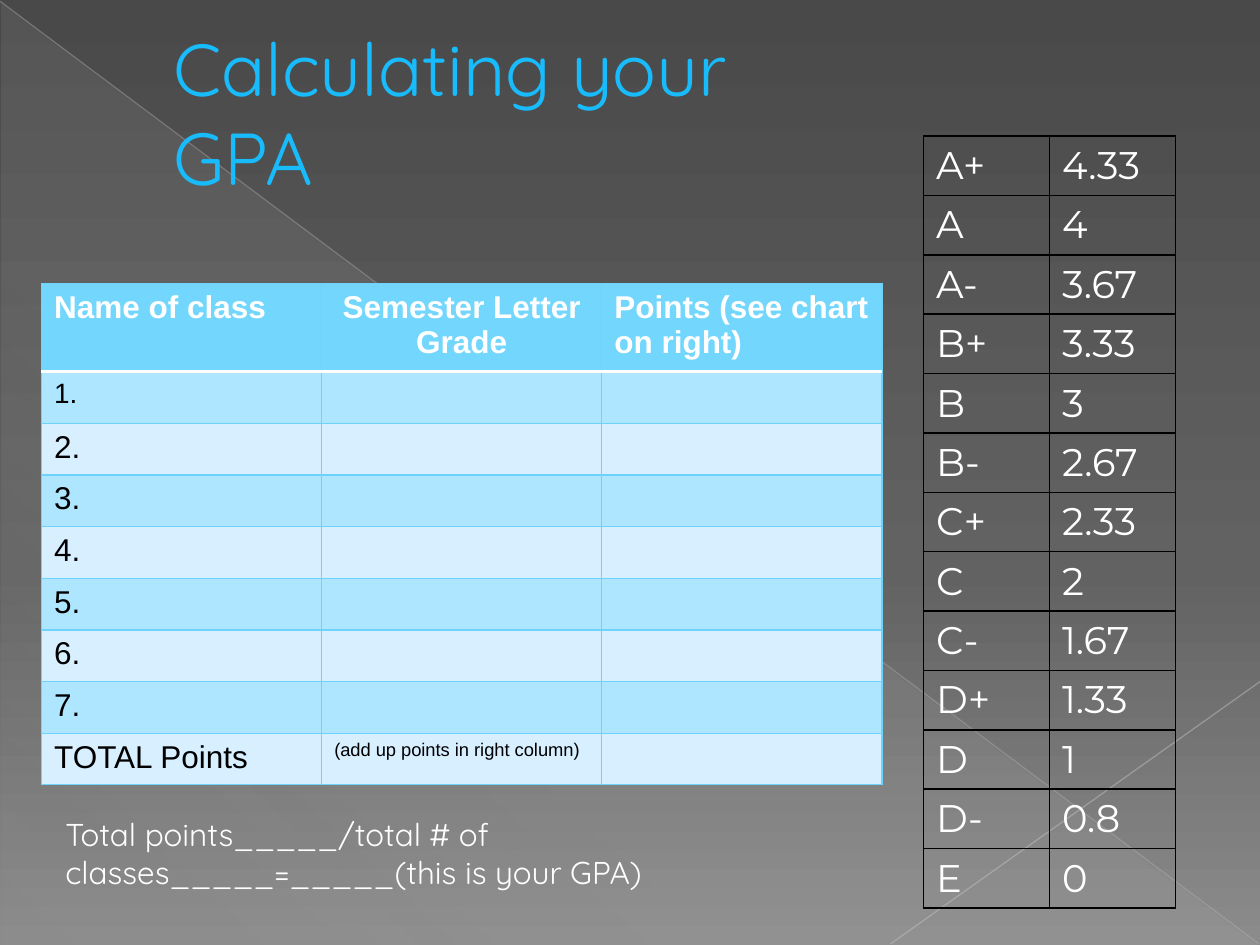
from lxml import etree
from pptx import Presentation
from pptx import util as u
from pptx.dml.color import RGBColor
from pptx.enum import shapes, text
from pptx.oxml import parse_xml
from pptx.oxml.ns import qn

# Content
TITLE = "Calculating your \vGPA"
FORMULA = "Total points_____/total # of classes_____=_____(this is your GPA)"
GRADES = [("A+", "4.33"), ("A", "4"), ("A-", "3.67"), ("B+", "3.33"),
          ("B", "3"), ("B-", "2.67"), ("C+", "2.33"), ("C", "2"),
          ("C-", "1.67"), ("D+", "1.33"), ("D", "1"), ("D-", "0.8"),
          ("E", "0")]
HEADS = ("Name of class", "Semester Letter Grade",
         "Points (see chart on right)")
CLASSES = [HEADS] + [(f"{n}.", "", "") for n in range(1, 8)]
CLASSES += [("TOTAL Points", "(add up points in right column)", "")]

# Look
COLORS = {"title": "18BBFC", "white": "FFFFFF", "black": "000000",
          "head": "73D6FD", "odd": "AFE6FF", "even": "D7EFFF",
          "edge": "6DD3FB", "shade": "D2D2D2", "down": "BEBEBE",
          "up": "C5C5C5"}
BACK = [(0, "494949", 100), (60, "626262", 100), (100, "8B8B8B", 100)]
SHADE = [(0, COLORS["shade"], 10), (70, COLORS["shade"], 8),
         (100, COLORS["shade"], 1)]
RAYS = [((0, 0.01), (9.99, 7.49), "down", 35),
        ((10, 5.41), (7.07, 7.49), "up", 45)]
FONTS = {"title": {"name": "Quicksand", "size": u.Pt(42), "color": "title"},
         "formula": {"name": "Quicksand", "size": u.Pt(18), "color": "white"},
         "grade": {"name": "Montserrat", "size": u.Pt(22), "color": "white"},
         "head": {"name": "Arial", "size": u.Pt(18), "color": "white",
                  "bold": True},
         "body": {"name": "Arial", "size": u.Pt(18), "color": "black",
                  "bold": False}}
FONTS["first"] = {**FONTS["body"], "size": u.Pt(16)}
FONTS["note"] = {**FONTS["body"], "size": u.Pt(10.5)}
NS = "http://schemas.openxmlformats.org/drawingml/2006/main"


def rgb(key):
    return RGBColor.from_string(COLORS[key])


def style(font, look):
    for key, value in look.items():
        if key == "color":
            font.color.rgb = rgb(value)
        else:
            setattr(font, key, value)


def blend(stops, angle):
    """Gradient fill element from (position, colour, opacity) stops."""
    marks = "".join(
        f'<a:gs pos="{pos * 1000}"><a:srgbClr val="{color}">'
        f'<a:alpha val="{alpha * 1000}"/></a:srgbClr></a:gs>'
        for pos, color, alpha in stops)
    return parse_xml(f'<a:gradFill xmlns:a="{NS}" rotWithShape="1"><a:gsLst>'
                     f'{marks}</a:gsLst><a:lin ang="{angle * 60000}" '
                     f'scaled="0"/></a:gradFill>')


def paint(fill, holder, stops, angle):
    fill.solid()
    old = holder.find(qn("a:solidFill"))
    holder.replace(old, blend(stops, angle))


def add_ray(start, end, color, alpha):
    ends = [u.Inches(n) for n in (*start, *end)]
    ray = slide.shapes.add_connector(shapes.MSO_CONNECTOR.STRAIGHT, *ends)
    ray.line.width = u.Pt(0.75)
    ray.line.color.rgb = rgb(color)
    tone = ray.line._ln.find(".//" + qn("a:srgbClr"))
    etree.SubElement(tone, qn("a:alpha"), val=str(alpha * 1000))
    etree.SubElement(ray._element.spPr, qn("a:effectLst"))


def add_text(words, look, box, anchor):
    frame = slide.shapes.add_textbox(*map(u.Inches, box)).text_frame
    frame.word_wrap = True
    frame.vertical_anchor = anchor
    para = frame.paragraphs[0]
    para.text = words
    for run in para.runs:
        style(run.font, FONTS[look])
    return para


def edge(cell, sides):
    """Draw borders; sides maps L, R, T, B to (colour, points)."""
    props = cell._tc.get_or_add_tcPr()
    for spot, side in enumerate("LRTB"):
        color, width = sides[side]
        props.insert(spot, parse_xml(
            f'<a:ln{side} xmlns:a="{NS}" w="{u.Pt(width)}"><a:solidFill>'
            f'<a:srgbClr val="{COLORS[color]}"/></a:solidFill>'
            f'</a:ln{side}>'))


def add_grid(rows, box, heights, pick):
    """Table whose cells get (font, fill, borders) from pick(row, col)."""
    size = len(rows), len(rows[0])
    grid = slide.shapes.add_table(*size, *map(u.Inches, box)).table
    grid.first_row = grid.horz_banding = False
    for r, row in enumerate(rows):
        grid.rows[r].height = u.Inches(heights[r])
        for c, words in enumerate(row):
            cell = grid.cell(r, c)
            look, fill, sides = pick(r, c)
            para = cell.text_frame.paragraphs[0]
            para.text = words
            style(para.runs[0].font if words else para.font, FONTS[look])
            if fill:
                cell.fill.solid()
                cell.fill.fore_color.rgb = rgb(fill)
            else:
                cell.fill.background()
            edge(cell, sides)
    return grid


def pick_grade(r, c):
    return "grade", None, dict.fromkeys("LRTB", ("black", 1))


def pick_class(r, c):
    sides = dict.fromkeys("LRTB", ("edge", 0.75))
    if r == 0:
        return "head", "head", {**sides, "B": ("white", 2)}
    if r == 1:
        sides["T"] = ("white", 2)
    look = {(1, 0): "first", (8, 1): "note"}.get((r, c), "body")
    return look, "odd" if r % 2 else "even", sides


deck = Presentation()
deck.slide_width, deck.slide_height = u.Inches(10), u.Inches(7.5)
slide = deck.slides.add_slide(deck.slide_layouts[6])

# Backdrop: gradient, shaded corner and rays
back = slide.background.fill
back.solid()
paint(back, slide._element.find(".//" + qn("p:bgPr")), BACK, 90)
corner = slide.shapes.add_shape(
    shapes.MSO_SHAPE.RIGHT_TRIANGLE,
    *map(u.Inches, (0.01, 0.02, 9.98, 7.48)))
corner.shadow.inherit = False
corner.line.fill.background()
paint(corner.fill, corner._element.spPr, SHADE, 133)
for ray in RAYS:
    add_ray(*ray)

# Title
para = add_text(TITLE, "title", (0.75, 0.11, 8.1, 1.55),
                text.MSO_ANCHOR.MIDDLE)
para._p.get_or_add_pPr().set("marL", str(u.Inches(0.53)))

# Grade points
add_grid(GRADES, (7.33, 1.08, 2, 6.13),
         [6.13 / len(GRADES)] * len(GRADES), pick_grade)

# Class worksheet
sheet = add_grid(CLASSES, (0.33, 2.25, 6.67, 3.94),
                 [0.66] + [0.41] * 8, pick_class)
sheet.cell(0, 1).text_frame.paragraphs[0].alignment = text.PP_ALIGN.CENTER

# Formula
add_text(FORMULA, "formula", (0.42, 6.42, 6.58, 0.71), text.MSO_ANCHOR.TOP)

deck.save("out.pptx")
